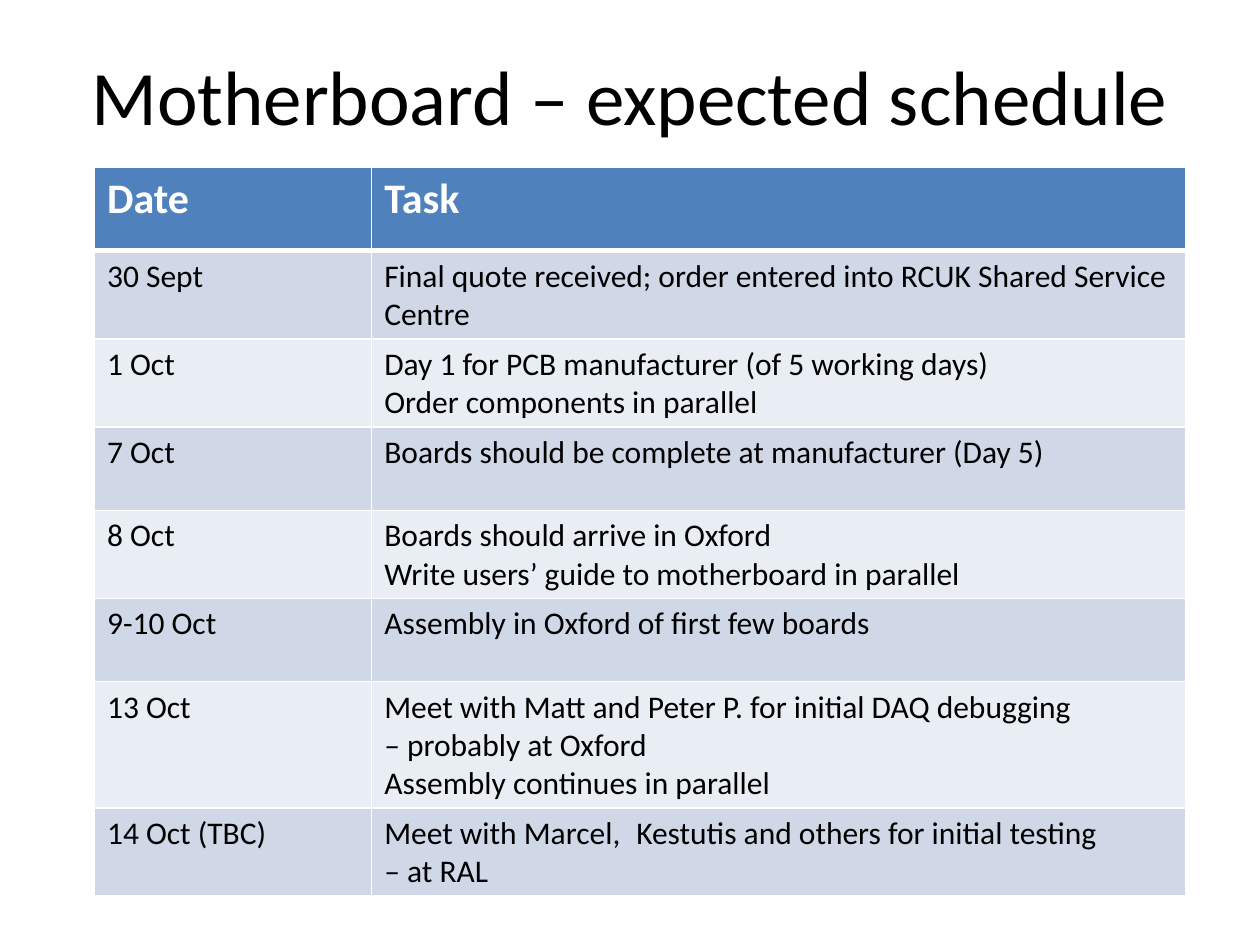
from lxml import etree
from pptx import Presentation
from pptx.dml.color import RGBColor
from pptx.enum.text import MSO_ANCHOR, PP_ALIGN
from pptx.oxml.ns import qn
from pptx.util import Inches, Pt

CENTER = PP_ALIGN.CENTER
MIDDLE = MSO_ANCHOR.MIDDLE

BLACK = RGBColor(0x00, 0x00, 0x00)
WHITE = RGBColor(0xFF, 0xFF, 0xFF)
HEADER_BLUE = RGBColor(0x4F, 0x81, 0xBD)
BANDS = (RGBColor(0xD0, 0xD8, 0xE8), RGBColor(0xE9, 0xED, 0xF4))

FONT = "Calibri"
SLIDE_WIDTH = Inches(10)
SLIDE_HEIGHT = Inches(7.5)
COLUMN_WIDTHS = (Inches(2.2), Inches(6.46))
ROW_HEIGHT = Inches(0.66)

HEADINGS = ("Date", "Task")
SCHEDULE = (
    ("30 Sept", ["Final quote received; order entered into RCUK Shared Service Centre"]),
    ("1 Oct", ["Day 1 for PCB manufacturer (of 5 working days)",
               "Order components in parallel"]),
    ("7 Oct", ["Boards should be complete at manufacturer (Day 5)"]),
    ("8 Oct", ["Boards should arrive in Oxford",
               "Write users’ guide to motherboard in parallel"]),
    ("9-10 Oct", ["Assembly in Oxford of first few boards"]),
    ("13 Oct", ["Meet with Matt and Peter P. for initial DAQ debugging \n– probably at Oxford",
                "Assembly continues in parallel"]),
    ("14 Oct (TBC)", ["Meet with Marcel, \tKestutis and others for initial testing \n– at RAL"]),
)


def write_paragraph(paragraph, text, size, color, bold=False):
    for index, line in enumerate(text.split("\n")):
        if index:
            paragraph.add_line_break()
        run = paragraph.add_run()
        run.text = line
        run.font.name = FONT
        run.font.size = Pt(size)
        run.font.bold = bold
        run.font.color.rgb = color


def add_title(slide, text):
    title = slide.shapes.add_textbox(
        int(SLIDE_WIDTH * 0.05), Inches(0.13), int(SLIDE_WIDTH * 0.9), Inches(1.25))
    frame = title.text_frame
    frame.word_wrap = True
    frame.vertical_anchor = MIDDLE
    frame.paragraphs[0].alignment = CENTER
    write_paragraph(frame.paragraphs[0], text, 44, BLACK)


def set_borders(cell, bottom_width):
    properties = cell._tc.get_or_add_tcPr()
    widths = {"a:lnL": 1, "a:lnR": 1, "a:lnT": 1, "a:lnB": bottom_width}
    for side, width in widths.items():
        border = etree.SubElement(properties, qn(side), w=str(Pt(width)))
        fill = etree.SubElement(border, qn("a:solidFill"))
        etree.SubElement(fill, qn("a:srgbClr"), val=str(WHITE))


def fill_cell(cell, paragraphs, background, size, color, bold=False, bottom_width=1):
    set_borders(cell, bottom_width)
    cell.fill.solid()
    cell.fill.fore_color.rgb = background
    frame = cell.text_frame
    for index, text in enumerate(paragraphs):
        paragraph = frame.add_paragraph() if index else frame.paragraphs[0]
        write_paragraph(paragraph, text, size, color, bold)


def add_schedule(slide):
    row_count = len(SCHEDULE) + 1
    schedule = slide.shapes.add_table(
        row_count, len(HEADINGS), Inches(0.75), Inches(1.33),
        sum(COLUMN_WIDTHS), ROW_HEIGHT * row_count).table
    for column, width in zip(schedule.columns, COLUMN_WIDTHS):
        column.width = width
    for row in schedule.rows:
        row.height = ROW_HEIGHT
    for column, heading in enumerate(HEADINGS):
        fill_cell(schedule.cell(0, column), [heading], HEADER_BLUE, 24, WHITE,
                  bold=True, bottom_width=3)
    for index, (date, tasks) in enumerate(SCHEDULE):
        band = BANDS[index % len(BANDS)]
        for column, paragraphs in enumerate(([date], tasks)):
            fill_cell(schedule.cell(index + 1, column), paragraphs, band, 18, BLACK)


def main():
    presentation = Presentation()
    presentation.slide_width = SLIDE_WIDTH
    presentation.slide_height = SLIDE_HEIGHT
    slide = presentation.slides.add_slide(presentation.slide_layouts[6])
    add_title(slide, "Motherboard – expected schedule")
    add_schedule(slide)
    presentation.save("out.pptx")


if __name__ == "__main__":
    main()
